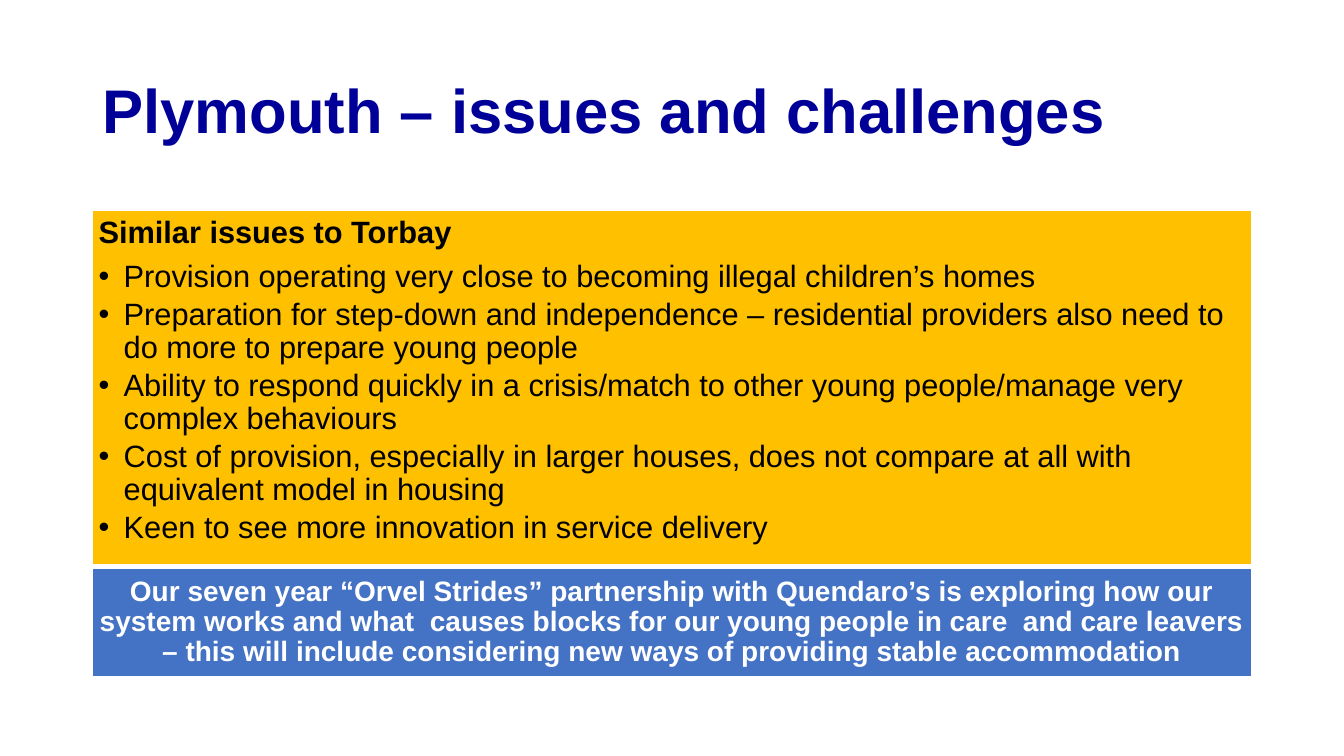
from lxml import etree
from pptx import Presentation
from pptx.dml.color import RGBColor
from pptx.enum import shapes, text
from pptx.oxml import ns
from pptx.util import Pt

NAVY = RGBColor(0x00, 0x00, 0x99)
AMBER = RGBColor(0xFF, 0xC0, 0x00)
BLUE = RGBColor(0x44, 0x72, 0xC4)
BLACK = RGBColor(0x00, 0x00, 0x00)
WHITE = RGBColor(0xFF, 0xFF, 0xFF)

LEFT, WIDTH = 66, 828
INSET = 4.4
INDENT = 18

TITLE = "Plymouth – issues and challenges"
HEAD = "Similar issues to Torbay"
ISSUES = [
    "Provision operating very close to becoming illegal children’s homes",
    "Preparation for step-down and independence – residential providers "
    "also need to do more to prepare young people",
    "Ability to respond quickly in a crisis/match to other young "
    "people/manage very complex behaviours",
    "Cost of provision, especially in larger houses, does not compare at all "
    "with equivalent model in housing",
    "Keen to see more innovation in service delivery",
]
NOTE = (
    "Our seven year “Orvel Strides” partnership with Quendaro’s is exploring "
    "how our system works and what  causes blocks for our young people in "
    "care  and care leavers – this will include considering new ways of "
    "providing stable accommodation"
)


def write(para, words, *, size, color, bold=False, align=text.PP_ALIGN.LEFT, after=0):
    """Put formatted words in a paragraph."""
    para.alignment = align
    para.line_spacing = 0.9
    para.space_before = Pt(0)
    para.space_after = Pt(after)
    run = para.add_run()
    run.text = words
    font = run.font
    font.name, font.size, font.bold = "Arial", Pt(size), bold
    font.color.rgb = color


def bullet(para, mark=None):
    """Set the bullet and hanging indent, or clear both."""
    props = para._p.get_or_add_pPr()
    indent = int(Pt(INDENT)) if mark else 0
    props.set("marL", str(indent))
    props.set("indent", str(-indent))
    if mark:
        etree.SubElement(props, ns.qn("a:buChar")).set("char", mark)
    else:
        etree.SubElement(props, ns.qn("a:buNone"))


def place(shape, top, height):
    """Set a shape in the slide's single column."""
    shape.left, shape.top = Pt(LEFT), Pt(top)
    shape.width, shape.height = Pt(WIDTH), Pt(height)


def setup(frame, anchor, inset):
    """Set wrapping, anchor and margins of a text frame."""
    frame.word_wrap = True
    frame.auto_size = text.MSO_AUTO_SIZE.NONE
    frame.vertical_anchor = anchor
    frame.margin_left = frame.margin_right = Pt(inset)
    frame.margin_top = frame.margin_bottom = Pt(inset)


def paint(shape, color):
    """Fill a panel and give it a thin white edge."""
    shape.fill.solid()
    shape.fill.fore_color.rgb = color
    shape.line.color.rgb = WHITE
    shape.line.width = Pt(1)


def add_title(slide):
    """Format the title placeholder."""
    title = slide.shapes.title
    place(title, 28.75, 104.4)
    setup(title.text_frame, text.MSO_ANCHOR.MIDDLE, 7.2)
    write(title.text_frame.paragraphs[0], TITLE, size=44, color=NAVY, bold=True)


def add_list(slide):
    """Format the body placeholder as the issues panel."""
    body = slide.placeholders[1]
    place(body, 150.5, 252.7)
    paint(body, AMBER)
    frame = body.text_frame
    setup(frame, text.MSO_ANCHOR.TOP, INSET)
    head = frame.paragraphs[0]
    write(head, HEAD, size=22, color=BLACK, bold=True, after=7.7)
    bullet(head)
    for issue in ISSUES:
        para = frame.add_paragraph()
        para.level = 1
        write(para, issue, size=22, color=BLACK, after=3.3)
        bullet(para, "•")


def add_note(slide):
    """Add the partnership panel."""
    note = slide.shapes.add_shape(
        shapes.MSO_SHAPE.RECTANGLE, Pt(LEFT), Pt(406.1), Pt(WIDTH), Pt(77)
    )
    note.shadow.inherit = False
    paint(note, BLUE)
    setup(note.text_frame, text.MSO_ANCHOR.MIDDLE, INSET)
    write(note.text_frame.paragraphs[0], NOTE, size=20, color=WHITE,
          bold=True, align=text.PP_ALIGN.CENTER)


def main():
    """Build and save the slide."""
    deck = Presentation()
    deck.slide_width, deck.slide_height = Pt(960), Pt(540)
    slide = deck.slides.add_slide(deck.slide_layouts[1])
    add_title(slide)
    add_list(slide)
    add_note(slide)
    deck.save("out.pptx")


if __name__ == "__main__":
    main()
